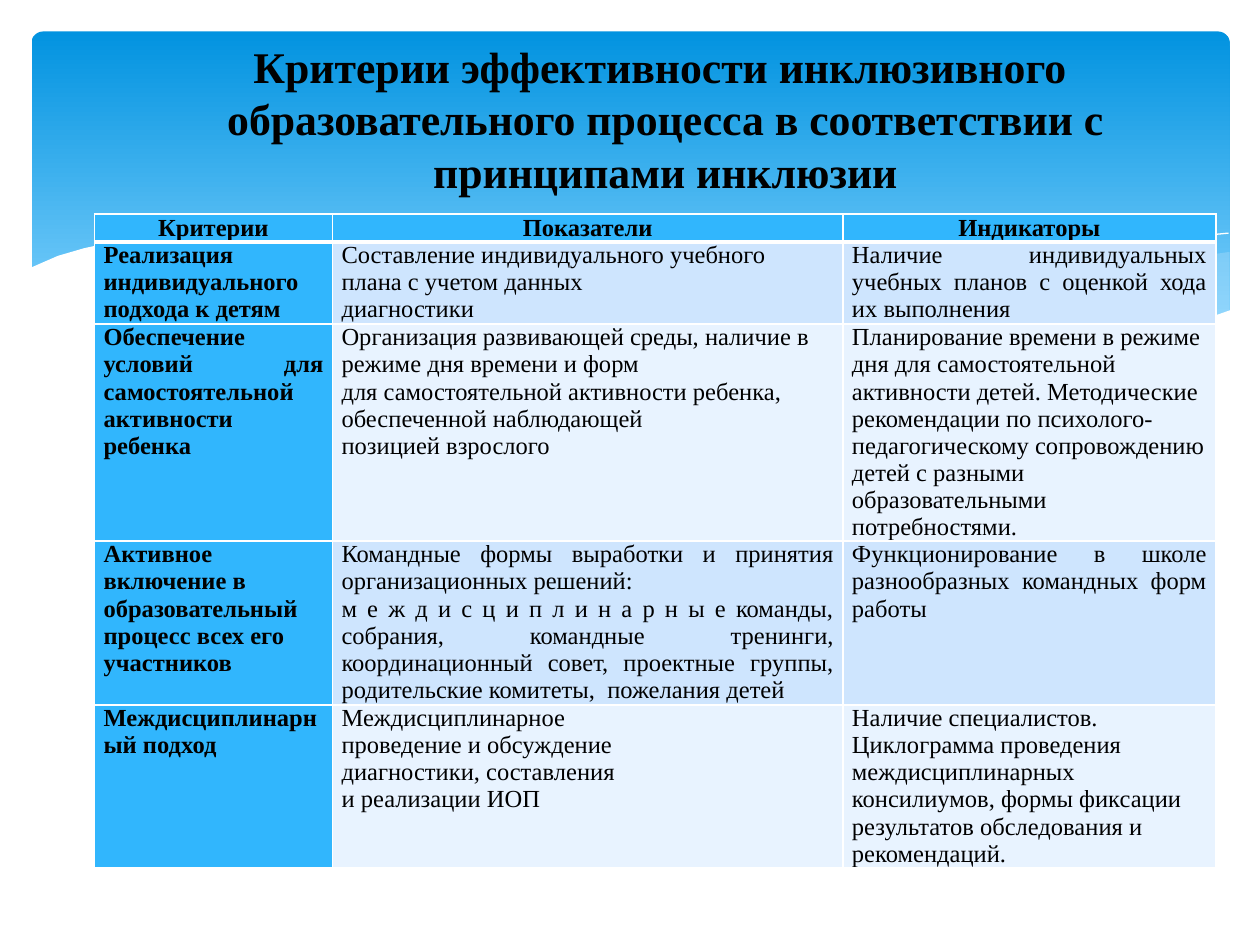
from dataclasses import dataclass
from typing import Optional

from lxml import etree
from pptx import Presentation
from pptx.dml.color import RGBColor
from pptx.enum.shapes import MSO_SHAPE
from pptx.enum.text import MSO_ANCHOR, PP_ALIGN
from pptx.oxml.ns import qn
from pptx.util import Pt

ROUNDED = MSO_SHAPE.ROUNDED_RECTANGLE
MIDDLE = MSO_ANCHOR.MIDDLE
LEFT, CENTER, JUSTIFY = PP_ALIGN.LEFT, PP_ALIGN.CENTER, PP_ALIGN.JUSTIFY

FONT = "Times New Roman"
BLACK, WHITE, PALE_BLUE = "000000", "FFFFFF", "C6E7FC"
HEADER_BLUE = "31B6FD"
BAND_FILLS = ("CEE5FE", "E8F3FF")
COLUMN_WIDTHS = (136, 291.7, 213.1)
ROW_HEIGHTS = (15.8, 47, 124, 93.6, 92.6)


@dataclass
class Wave:
    points: list[tuple[float, float]]
    fill: Optional[str] = None
    opacity: int = 100


@dataclass
class Entry:
    lines: list[str]
    align: PP_ALIGN = JUSTIFY


WAVES = [
    Wave([(702, 144), (682.6, 146.9), (663.1, 151.2), (641.5, 155.5), (619.9, 160.6),
          (579.6, 170.6), (542.2, 178.6), (508.3, 185), (475.9, 190.8), (497.5, 193.7),
          (527, 197.3), (553.7, 199.4), (586.1, 200.2), (614.9, 198.7), (640.1, 195.8),
          (663.1, 190.8), (683.3, 185), (702.7, 177.8), (702.7, 144)], PALE_BLUE, 29),
    Wave([(643, 196.6), (602.6, 190.8), (558, 182.9), (508.3, 172.8), (452.9, 159.8),
          (420.5, 151.9), (389.5, 146.2), (352.1, 139.7), (318.2, 136.1), (273.6, 133.2),
          (236.2, 134.6), (205.9, 137.5), (246.2, 143.3), (290.9, 151.9), (323.3, 159.8),
          (381.6, 172.8), (432.7, 183.6), (478.8, 191.5), (519.8, 197.3), (556.6, 199.4),
          (589, 200.2), (617, 199.4)], PALE_BLUE, 40),
    Wave([(222.5, 140.4), (247.7, 136.8), (278.6, 134.6), (324, 135.4), (367.2, 138.2),
          (419, 144), (478.8, 153.4), (523.4, 162.7), (572.4, 173.5), (653, 195.8)]),
    Wave([(441.4, 185), (500.4, 169.2), (558.7, 155.5), (623.5, 143.3), (665.3, 136.8),
          (702, 133.2)]),
    Wave([(703.4, 177.1), (676.8, 186.5), (647.3, 193.7), (612, 198), (582.5, 199.4),
          (535.7, 197.3), (481, 190.8), (416.9, 180), (362.2, 167.8), (321.8, 158.4),
          (262.8, 145.4), (210.2, 136.8), (165.6, 133.2), (127.4, 132.5), (95, 133.9),
          (68.4, 137.5), (48.2, 141.8), (33.1, 146.2), (16.6, 153.4), (16.6, 236.9),
          (703.4, 236.9)], WHITE),
]

ROWS = [
    [Entry(["Критерии"], CENTER), Entry(["Показатели"], CENTER), Entry(["Индикаторы"], CENTER)],
    [Entry(["Реализация индивидуального подхода к детям"]),
     Entry(["Составление индивидуального учебного", "плана с учетом данных", "диагностики"]),
     Entry(["Наличие индивидуальных учебных планов с оценкой хода их выполнения"])],
    [Entry(["Обеспечение условий для самостоятельной активности ребенка"]),
     Entry(["Организация развивающей среды, наличие в режиме дня времени и форм",
            "для самостоятельной активности ребенка, обеспеченной наблюдающей",
            "позицией взрослого"], LEFT),
     Entry(["Планирование времени в режиме дня для самостоятельной активности детей. "
            "Методические рекомендации по психолого-педагогическому сопровождению детей "
            "с разными образовательными потребностями."], LEFT)],
    [Entry(["Активное включение в образовательный процесс всех его", "участников"], LEFT),
     Entry(["Командные формы выработки и принятия организационных решений:",
            "м е ж д и с ц и п л и н а р н ы е команды, собрания, командные тренинги, "
            "координационный совет, проектные группы, родительские комитеты,  пожелания детей"]),
     Entry(["Функционирование в школе разнообразных командных форм работы"])],
    [Entry(["Междисциплинарный подход"]),
     Entry(["Междисциплинарное", "проведение и обсуждение", "диагностики, составления",
            "и реализации ИОП"]),
     Entry(["Наличие специалистов.",
            "Циклограмма проведения междисциплинарных консилиумов, формы фиксации "
            "результатов обследования и рекомендаций."], LEFT)],
]


def color(value: str) -> RGBColor:
    return RGBColor.from_string(value)


def set_solid(fill, value: str) -> None:
    fill.solid()
    fill.fore_color.rgb = color(value)


def style_paragraph(paragraph, size: float, bold: bool, align: PP_ALIGN) -> None:
    paragraph.alignment = align
    font = paragraph.font
    font.name, font.size, font.bold = FONT, Pt(size), bold
    font.color.rgb = color(BLACK)


def add_banner(slide) -> None:
    shape = slide.shapes.add_shape(ROUNDED, Pt(18), Pt(18), Pt(684.7), Pt(194.4))
    shape.adjustments[0] = 0.034
    shape.shadow.inherit = False
    shape.line.fill.background()
    shape.fill.gradient()
    shape.fill.gradient_angle = 270
    for stop, position, value in zip(shape.fill.gradient_stops, (0, 0.9), ("0293E0", "83D3FE")):
        stop.position = position
        stop.color.rgb = color(value)


def add_wave(slide, wave: Wave) -> None:
    """Draw a filled closed wave, or an open white hairline when it has no fill."""
    start, *others = [(Pt(x), Pt(y)) for x, y in wave.points]
    builder = slide.shapes.build_freeform(*start)
    builder.add_line_segments(others, close=wave.fill is not None)
    shape = builder.convert_to_shape()
    shape.shadow.inherit = False
    if wave.fill is None:
        shape.fill.background()
        shape.line.color.rgb = color(WHITE)
        shape.line.width = Pt(0)
        return
    set_solid(shape.fill, wave.fill)
    shape.line.fill.background()
    if wave.opacity < 100:
        fill_color = shape._element.spPr.find(f".//{qn('a:srgbClr')}")
        etree.SubElement(fill_color, qn("a:alpha"), val=str(wave.opacity * 1000))


def set_borders(cell, widths: dict[str, float]) -> None:
    properties = cell._tc.get_or_add_tcPr()
    for index, (side, width) in enumerate(widths.items()):
        line = etree.Element(qn(f"a:{side}"), w=str(Pt(width)))
        fill = etree.SubElement(line, qn("a:solidFill"))
        etree.SubElement(fill, qn("a:srgbClr"), val=WHITE)
        properties.insert(index, line)


def fill_cell(cell, entry: Entry, row: int, column: int) -> None:
    is_heading = row == 0 or column == 0
    cell.margin_left = cell.margin_right = Pt(5.2)
    cell.margin_top = cell.margin_bottom = Pt(0)
    set_solid(cell.fill, HEADER_BLUE if is_heading else BAND_FILLS[(row - 1) % 2])
    cell.text_frame.text = "\n".join(entry.lines)
    for paragraph in cell.text_frame.paragraphs:
        style_paragraph(paragraph, 14, is_heading, entry.align)
    set_borders(cell, {"lnL": 1, "lnR": 1, "lnT": 3 if row == 1 else 1,
                       "lnB": 3 if row == 0 else 1})


def add_criteria_table(slide) -> None:
    frame = slide.shapes.add_table(len(ROWS), len(COLUMN_WIDTHS), Pt(54), Pt(122.4),
                                   Pt(sum(COLUMN_WIDTHS)), Pt(sum(ROW_HEIGHTS)))
    table = frame.table
    for column, width in zip(table.columns, COLUMN_WIDTHS):
        column.width = Pt(width)
    for row, height in zip(table.rows, ROW_HEIGHTS):
        row.height = Pt(height)
    for row_index, entries in enumerate(ROWS):
        for column_index, entry in enumerate(entries):
            fill_cell(table.cell(row_index, column_index), entry, row_index, column_index)


def add_title(slide) -> None:
    text_frame = slide.shapes.add_textbox(Pt(76.3), Pt(25), Pt(607.7), Pt(85)).text_frame
    text_frame.word_wrap = True
    text_frame.vertical_anchor = MIDDLE
    paragraph = text_frame.paragraphs[0]
    paragraph.text = ("Критерии эффективности инклюзивного \v"
                      "образовательного процесса в соответствии с принципами инклюзии")
    style_paragraph(paragraph, 25, True, CENTER)


def main() -> None:
    presentation = Presentation()
    presentation.slide_width, presentation.slide_height = Pt(720), Pt(540)
    slide = presentation.slides.add_slide(presentation.slide_layouts[6])
    add_banner(slide)
    for wave in WAVES:
        add_wave(slide, wave)
    add_criteria_table(slide)
    add_title(slide)
    presentation.save("out.pptx")


if __name__ == "__main__":
    main()
